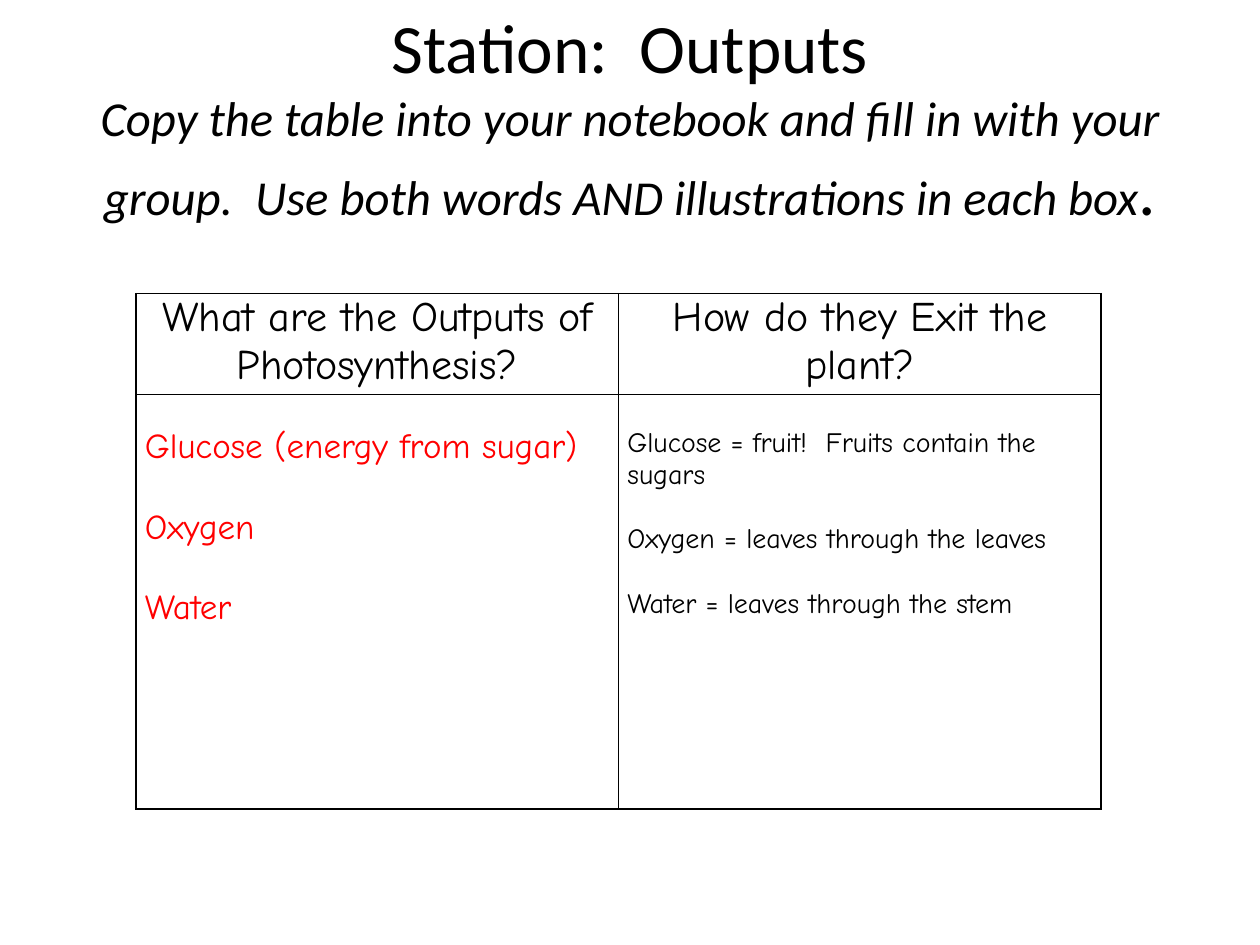
from lxml.etree import SubElement
from pptx import Presentation
from pptx.dml.color import RGBColor
from pptx.enum.text import MSO_ANCHOR, PP_ALIGN
from pptx.oxml.ns import qn
from pptx.util import Inches, Pt

BLACK = RGBColor(0, 0, 0)
RED = RGBColor(255, 0, 0)

TITLE = "Station:  Outputs"
TASK = ("Copy the table into your notebook and fill in with your group.  "
        "Use both words AND illustrations in each box")
HEADERS = ["What are the Outputs of Photosynthesis?", "How do they Exit the plant?"]
ANSWERS = [
    (["Glucose (energy from sugar)", "Oxygen", "Water"], 20, RED, 23),
    (["Glucose = fruit!  Fruits contain the sugars",
      "Oxygen = leaves through the leaves",
      "Water = leaves through the stem"], 16, BLACK, 18.4),
]
COL_W = 3.83
ROW_H = [0.76, 3.29]


def add_text(p, text, size, font="Comic Neue", color=BLACK, italic=False):
    r = p.add_run()
    r.text = text
    r.font.name = font
    r.font.size = Pt(size)
    r.font.color.rgb = color
    r.font.bold = False
    r.font.italic = italic


def style_cell(cell, top=0):
    cell.margin_left = cell.margin_right = Inches(0.07)
    cell.margin_top = Inches(top)
    cell.margin_bottom = 0
    cell.fill.background()
    tc_pr = cell._tc.get_or_add_tcPr()
    for i, side in enumerate(("a:lnL", "a:lnR", "a:lnT", "a:lnB")):
        ln = SubElement(tc_pr, qn(side), w=str(Pt(1)))
        fill = SubElement(ln, qn("a:solidFill"))
        SubElement(fill, qn("a:srgbClr"), val=str(BLACK))
        tc_pr.insert(i, ln)


def add_title(s):
    sp = s.shapes.add_textbox(Inches(0.5), Inches(0.3), Inches(9), Inches(1.25))
    tf = sp.text_frame
    tf.word_wrap = True
    tf.vertical_anchor = MSO_ANCHOR.MIDDLE
    p = tf.paragraphs[0]
    p.alignment = PP_ALIGN.CENTER
    add_text(p, TITLE, 39.6, font="Calibri")
    p.add_line_break()
    add_text(p, TASK, 27.9, font="Calibri", italic=True)
    add_text(p, ".", 39.6, font="Calibri")


def add_answers(s):
    table = s.shapes.add_table(2, 2, Inches(1.08), Inches(2.33),
                               Inches(2 * COL_W), Inches(sum(ROW_H))).table
    table.first_row = table.horz_banding = False
    for row, height in zip(table.rows, ROW_H):
        row.height = Inches(height)
    for col, (header, (lines, size, color, gap)) in enumerate(zip(HEADERS, ANSWERS)):
        table.columns[col].width = Inches(COL_W)
        head, body = table.cell(0, col), table.cell(1, col)
        style_cell(head)
        style_cell(body, top=0.26)
        p = head.text_frame.paragraphs[0]
        p.alignment = PP_ALIGN.CENTER
        add_text(p, header, 24)
        tf = body.text_frame
        for i, line in enumerate(lines):
            p = tf.add_paragraph() if i else tf.paragraphs[0]
            if i:
                p.space_before = Pt(gap)
            add_text(p, line, size, color=color)


def main():
    prs = Presentation()
    prs.slide_width, prs.slide_height = Inches(10), Inches(7.5)
    s = prs.slides.add_slide(prs.slide_layouts[6])
    add_title(s)
    add_answers(s)
    prs.save("out.pptx")


if __name__ == "__main__":
    main()
